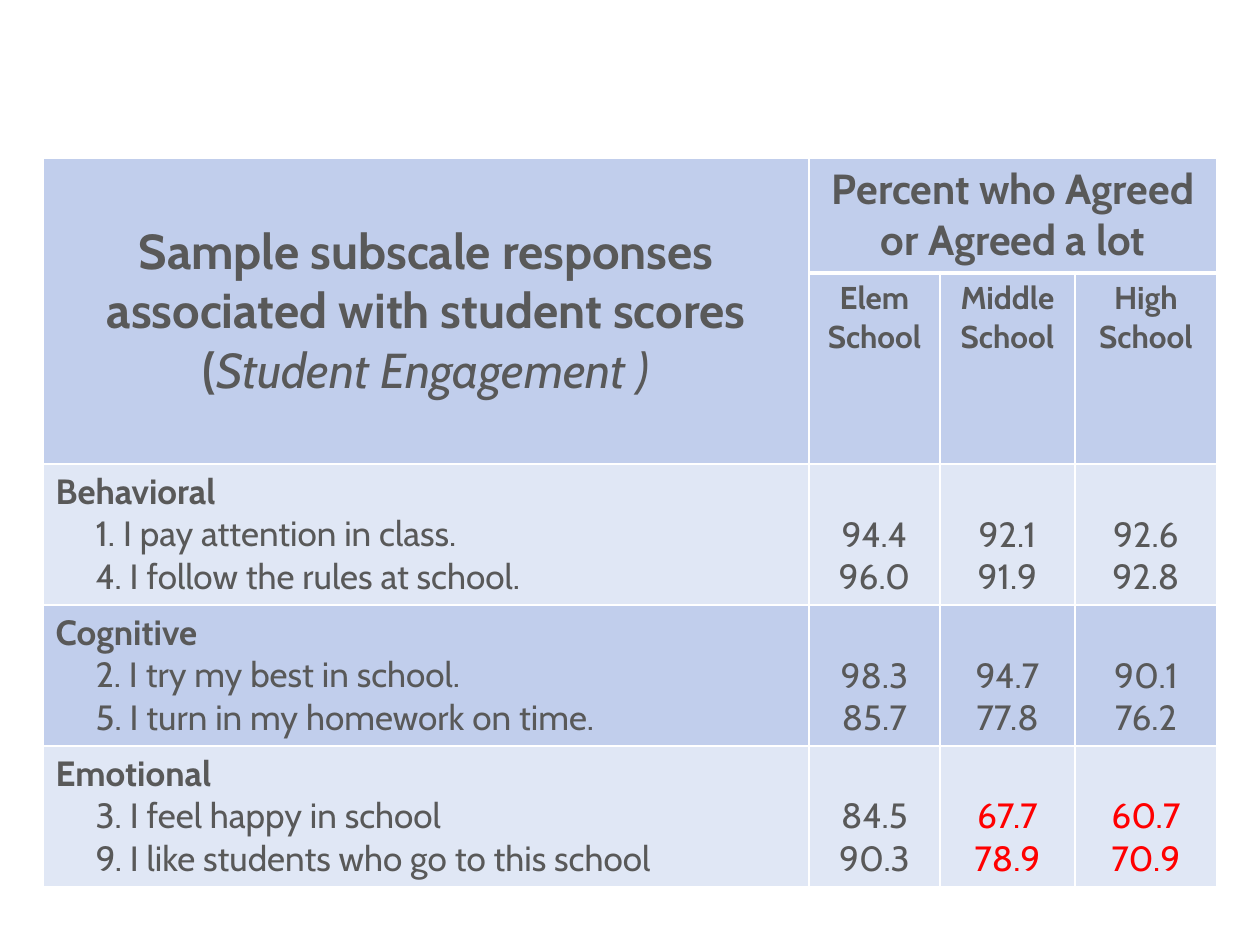
import pptx
import pptx.util
import pptx.dml.color
import pptx.enum.text
import pptx.oxml.ns
import lxml.etree

FONT = "Cabin"
TEXT, ALERT, WHITE = "595959", "FF0000", "FFFFFF"
DARK_BAND, LIGHT_BAND = "C1CEEC", "E0E7F5"

COLUMN_WIDTHS = [766, 131, 135, 142]
ROW_HEIGHTS = [115, 190, 141, 141, 140]
TABLE_LEFT, TABLE_TOP = 43, 158
ITEM_INDENT = 40

HEADING = "Sample subscale responses associated with student scores"
SUBSCALE = "Student Engagement )"
MEASURE = "Percent who Agreed or Agreed a lot"
SCHOOLS = [["Elem", "School"], ["Middle School"], ["High School"]]
GROUPS = [
    ("Behavioral", LIGHT_BAND, [
        ("1. I pay attention in class.", ["94.4", "92.1", "92.6"]),
        ("4. I follow the rules at school.", ["96.0", "91.9", "92.8"])]),
    ("Cognitive", DARK_BAND, [
        ("2. I try my best in school.", ["98.3", "94.7", "90.1"]),
        ("5. I turn in my homework on time.", ["85.7", "77.8", "76.2"])]),
    ("Emotional", LIGHT_BAND, [
        ("3. I feel happy in school", ["84.5", "67.7", "60.7"]),
        ("9. I like students who go to this school", ["90.3", "78.9", "70.9"])]),
]
ALERT_CELLS = {("Emotional", 1), ("Emotional", 2)}

CENTER = pptx.enum.text.PP_ALIGN.CENTER
LEFT = pptx.enum.text.PP_ALIGN.LEFT
ANCHOR = pptx.enum.text.MSO_ANCHOR


def px(length):
    return pptx.util.Emu(round(length * 914400 / 126))


def color(value):
    return pptx.dml.color.RGBColor.from_string(value)


def add_run(paragraph, text, size, bold=False, italic=False, ink=TEXT):
    run = paragraph.add_run()
    run.text = text
    run.font.name = FONT
    run.font.size = pptx.util.Pt(size)
    run.font.bold = bold
    run.font.italic = italic
    run.font.color.rgb = color(ink)


def add_lines(cell, lines, size, bold=False, ink=TEXT):
    frame = cell.text_frame
    for index, line in enumerate(lines):
        paragraph = frame.add_paragraph() if index else frame.paragraphs[0]
        paragraph.alignment = CENTER
        add_run(paragraph, line, size, bold, ink=ink)


def style_cell(cell, fill, top=1, bottom=1):
    properties = cell._tc.get_or_add_tcPr()
    for side, points in (("L", 1), ("R", 1), ("T", top), ("B", bottom)):
        line = lxml.etree.SubElement(properties, pptx.oxml.ns.qn("a:ln" + side))
        line.set("w", str(pptx.util.Pt(points)))
        solid = lxml.etree.SubElement(line, pptx.oxml.ns.qn("a:solidFill"))
        lxml.etree.SubElement(solid, pptx.oxml.ns.qn("a:srgbClr")).set("val", WHITE)
    cell.fill.solid()
    cell.fill.fore_color.rgb = color(fill)


def fill_header(table):
    for column in range(len(COLUMN_WIDTHS)):
        rule = 3 if column else 1
        style_cell(table.cell(0, column), DARK_BAND, bottom=rule)
        style_cell(table.cell(1, column), DARK_BAND, top=rule)
    heading = table.cell(0, 0)
    heading.merge(table.cell(1, 0))
    heading.vertical_anchor = ANCHOR.MIDDLE
    paragraph = heading.text_frame.paragraphs[0]
    paragraph.alignment = CENTER
    add_run(paragraph, HEADING, 28, bold=True)
    paragraph.add_line_break()
    add_run(paragraph, "(", 28, bold=True)
    add_run(paragraph, SUBSCALE, 28, italic=True)

    measure = table.cell(0, 1)
    measure.merge(table.cell(0, 3))
    add_lines(measure, [MEASURE], 24, bold=True)
    for column, school in enumerate(SCHOOLS, start=1):
        add_lines(table.cell(1, column), school, 18, bold=True)


def fill_group(table, row, name, fill, items):
    label = table.cell(row, 0)
    style_cell(label, fill)
    add_run(label.text_frame.paragraphs[0], name, 20, bold=True)
    for statement, _ in items:
        paragraph = label.text_frame.add_paragraph()
        paragraph.alignment = LEFT
        paragraph._p.get_or_add_pPr().set("marL", str(px(ITEM_INDENT)))
        add_run(paragraph, statement, 20)
    for index in range(len(SCHOOLS)):
        cell = table.cell(row, index + 1)
        style_cell(cell, fill)
        cell.vertical_anchor = ANCHOR.BOTTOM
        ink = ALERT if (name, index) in ALERT_CELLS else TEXT
        add_lines(cell, [values[index] for _, values in items], 20, ink=ink)


def main():
    presentation = pptx.Presentation()
    presentation.slide_width = px(1260)
    presentation.slide_height = px(945)
    slide = presentation.slides.add_slide(presentation.slide_layouts[6])
    table = slide.shapes.add_table(
        len(ROW_HEIGHTS), len(COLUMN_WIDTHS), px(TABLE_LEFT), px(TABLE_TOP),
        px(sum(COLUMN_WIDTHS)), px(sum(ROW_HEIGHTS))).table
    table.first_row = False
    table.horz_banding = False
    for column, width in zip(table.columns, COLUMN_WIDTHS):
        column.width = px(width)
    for row, height in zip(table.rows, ROW_HEIGHTS):
        row.height = px(height)
    fill_header(table)
    for row, group in enumerate(GROUPS, start=2):
        fill_group(table, row, *group)
    presentation.save("out.pptx")


if __name__ == "__main__":
    main()
